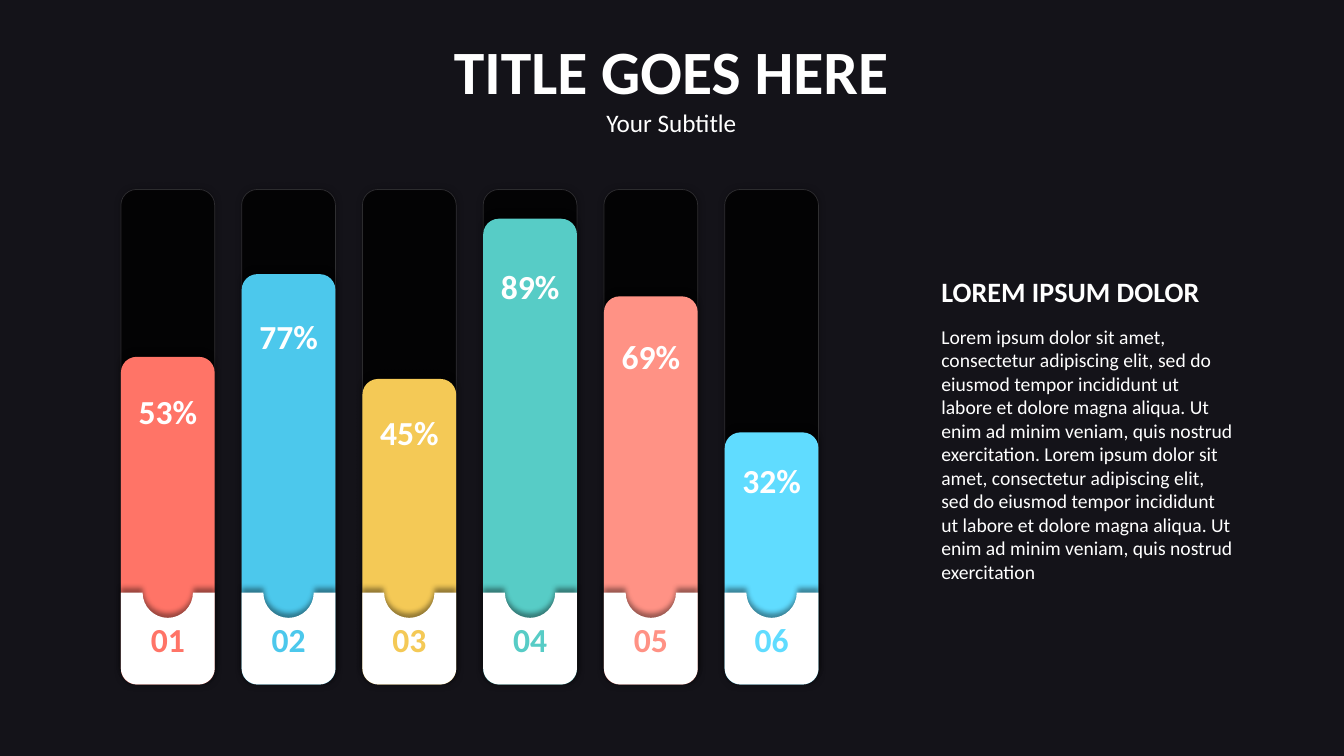
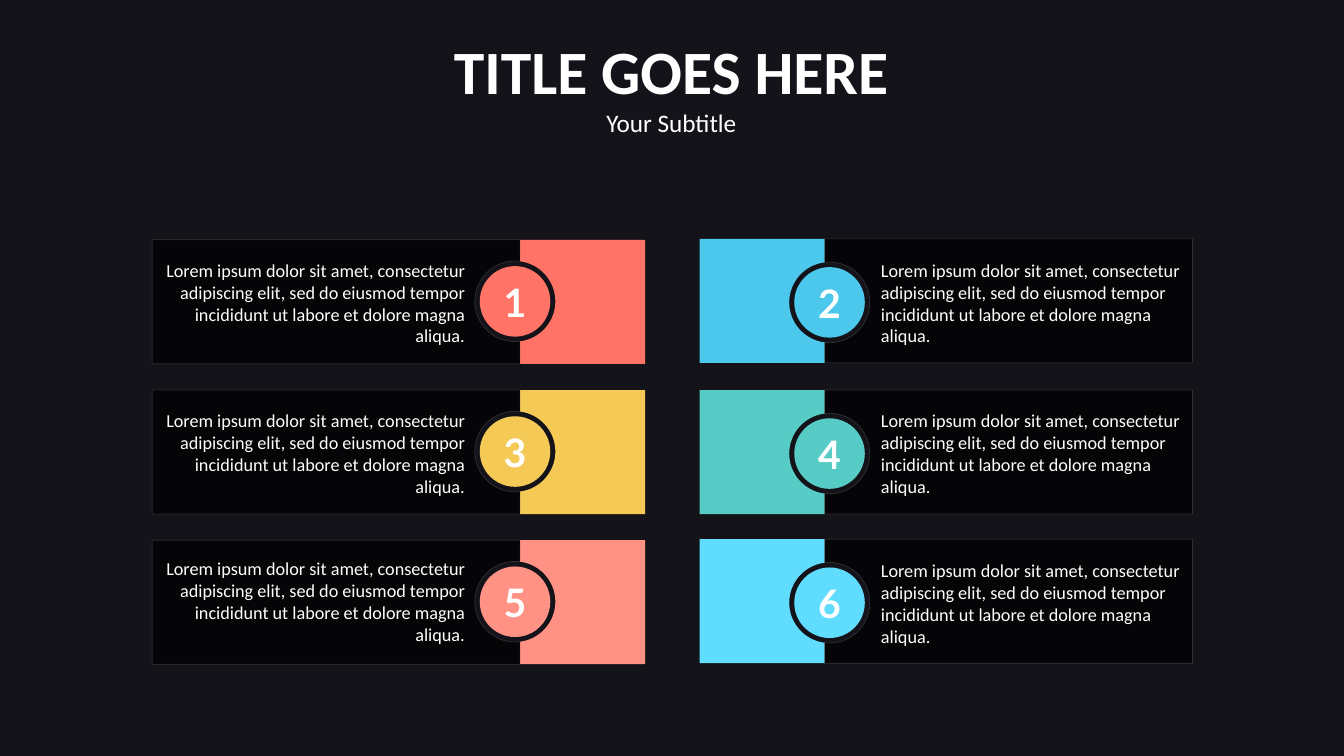
from math import acos, cos, degrees, radians, sin, tan

from lxml import etree
from pptx import Presentation
from pptx.dml.color import RGBColor
from pptx.enum.shapes import MSO_SHAPE
from pptx.enum.text import MSO_ANCHOR, MSO_AUTO_SIZE, PP_ALIGN
from pptx.oxml.ns import qn
from pptx.util import Inches, Pt

LEFT, CENTER, RIGHT = PP_ALIGN.LEFT, PP_ALIGN.CENTER, PP_ALIGN.RIGHT
TOP, MIDDLE = MSO_ANCHOR.TOP, MSO_ANCHOR.MIDDLE
FIT_SHAPE = MSO_AUTO_SIZE.SHAPE_TO_FIT_TEXT
RECT, ROUNDED, OVAL = MSO_SHAPE.RECTANGLE, MSO_SHAPE.ROUNDED_RECTANGLE, MSO_SHAPE.OVAL

BACKGROUND = RGBColor(0x52, 0x4E, 0x67)
BLACK = RGBColor(0x00, 0x00, 0x00)
WHITE = RGBColor(0xFF, 0xFF, 0xFF)
CORAL = RGBColor(0xFF, 0x74, 0x67)
BLUE = RGBColor(0x4C, 0xC8, 0xEC)
YELLOW = RGBColor(0xF4, 0xC9, 0x56)
TEAL = RGBColor(0x57, 0xCC, 0xC6)
SALMON = RGBColor(0xFF, 0x92, 0x85)
SKY = RGBColor(0x60, 0xDC, 0xFF)
PALETTE = [CORAL, BLUE, YELLOW, TEAL, SALMON, SKY]

TITLE, SUBTITLE = "TITLE GOES HERE", "Your Subtitle"
BARS = [("53%", 3.25), ("77%", 4.07), ("45%", 3.03),
        ("89%", 4.62), ("69%", 3.85), ("32%", 2.5)]
SENTENCE = ("Lorem ipsum dolor sit amet, consectetur adipiscing elit, sed do eiusmod "
            "tempor incididunt ut labore et dolore magna aliqua.")
SIDE_HEADING = "LOREM IPSUM DOLOR"
ENDING = "Ut enim ad minim veniam, quis nostrud exercitation"
SIDE_TEXT = f"{SENTENCE} {ENDING}. {SENTENCE} {ENDING}"

BAR_LEFT, BAR_LAST_LEFT, BAR_TOP = 1.2, 7.19, 1.88
BAR_PITCH = (BAR_LAST_LEFT - BAR_LEFT) / (len(BARS) - 1)
BAR_W, BAR_H = 0.93, 4.91
BAR_BOTTOM = BAR_TOP + BAR_H
BASE_H, NOTCH_R, CORNER_R = 0.91, 0.25, 0.16

CARD_LEFT, CARD_SEAM, CARD_RIGHT, CARD_H = 1.51, 5.16, 6.4, 1.23
CARD_TOPS = [2.38, 2.37, 3.87, 3.87, 5.36, 5.35]
DOT_CENTERS = [2.99, 3.0, 4.48, 4.5, 5.97, 5.98]
TEXT_TOPS = [2.57, 2.57, 4.06, 4.06, 5.53, 5.55]
DOT_X, DOT_R, BITE_R = 5.11, 0.35, 0.4
MIRROR_W = 13.34


def set_alpha(fill, percent):
    color = fill._xPr.find(qn("a:solidFill"))[0]
    etree.SubElement(color, qn("a:alpha"), val=str(percent * 1000))


def add_shadow(s, blur, distance, direction):
    effects = s._element.spPr.find(qn("a:effectLst"))
    shadow = etree.SubElement(effects, qn("a:outerShdw"), blurRad=str(Pt(blur)),
                              dist=str(Pt(distance)), dir=str(direction * 60000),
                              algn="ctr", rotWithShape="0")
    color = etree.SubElement(shadow, qn("a:srgbClr"), val=str(BLACK))
    etree.SubElement(color, qn("a:alpha"), val="40000")


def paint(s, color):
    s.shadow.inherit = False
    s.fill.solid()
    s.fill.fore_color.rgb = color
    s.line.fill.background()
    return s


def paint_glass(s):
    paint(s, BLACK)
    set_alpha(s.fill, 75)
    s.line.color.rgb = WHITE
    s.line.width = Pt(0.5)
    set_alpha(s.line.fill, 15)
    return s


def add_preset(slide, kind, x, y, w, h):
    return slide.shapes.add_shape(kind, Inches(x), Inches(y), Inches(w), Inches(h))


def arc(cx, cy, r, start, end):
    count = max(1, round(abs(end - start) / 90))
    step = radians(end - start) / count
    k = r * 4 / 3 * tan(step / 4)
    curves = []
    for i in range(count):
        a = radians(start) + i * step
        b = a + step
        x0, y0 = cx + r * cos(a), cy + r * sin(a)
        x1, y1 = cx + r * cos(b), cy + r * sin(b)
        curves.append([(x0 - k * sin(a), y0 + k * cos(a)),
                       (x1 + k * sin(b), y1 - k * cos(b)), (x1, y1)])
    return curves


def add_outline(slide, start, segments, mirrored=False):
    points = [start] + [point for segment in segments for point in segment]
    points = [(Inches(MIRROR_W - x if mirrored else x), Inches(y)) for x, y in points]
    builder = slide.shapes.build_freeform(*points[0], scale=1.0)
    builder.add_line_segments(points[1:], close=True)
    s = builder.convert_to_shape()
    lines = iter(list(s._element.iter(qn("a:lnTo"))))
    for segment in segments:
        nodes = [next(lines) for _ in segment]
        if len(nodes) == 3:
            curve = etree.Element(qn("a:cubicBezTo"))
            nodes[0].addprevious(curve)
            for node in nodes:
                curve.append(node[0])
                node.getparent().remove(node)
    return s


def write(s, lines, align=CENTER, anchor=TOP, font="Calibri"):
    tf = s.text_frame
    tf.word_wrap = True
    tf.vertical_anchor = anchor
    for i, (text, size, bold, color, before) in enumerate(lines):
        p = tf.paragraphs[0] if i == 0 else tf.add_paragraph()
        p.alignment = align
        p.space_before = Pt(before)
        r = p.add_run()
        r.text = text
        r.font.name, r.font.size, r.font.bold = font, Pt(size), bold
        r.font.color.rgb = color
    return tf


def add_text(slide, x, y, w, h, lines, align=CENTER):
    box = slide.shapes.add_textbox(Inches(x), Inches(y), Inches(w), Inches(h))
    tf = write(box, lines, align)
    tf.auto_size = FIT_SHAPE
    return tf


def add_slide(prs):
    slide = prs.slides.add_slide(prs.slide_layouts[6])
    add_text(slide, 3.65, 0.28, 6.02, 1.14,
             [(TITLE, 44, True, WHITE, 0), (SUBTITLE, 18, False, WHITE, 0)])
    return slide


def set_backdrop(prs, slide):
    master = prs.slide_master
    master.background.fill.solid()
    master.background.fill.fore_color.rgb = BACKGROUND
    veil = paint(slide.shapes.add_shape(RECT, 0, 0, prs.slide_width, prs.slide_height), BLACK)
    set_alpha(veil.fill, 75)
    master.shapes._spTree.insert(2, veil._element)


def add_bar(slide, i, label, height, color):
    x = BAR_LEFT + i * BAR_PITCH
    right, middle = x + BAR_W, x + BAR_W / 2
    track = paint_glass(add_preset(slide, ROUNDED, x, BAR_TOP, BAR_W, BAR_H))
    add_shadow(track, 5, 0, 0)

    top = BAR_BOTTOM - height
    bar = paint(add_preset(slide, ROUNDED, x, top, BAR_W, height), color)
    add_shadow(bar, 4, 3, 270)
    add_text(slide, x, top + 0.09 * height, BAR_W, 0.47, [(label, 24, True, WHITE, 0)])

    base_top = BAR_BOTTOM - BASE_H
    corner_y = BAR_BOTTOM - CORNER_R
    base = paint(add_outline(slide, (x, base_top), [
        [(middle - NOTCH_R, base_top)],
        *arc(middle, base_top, NOTCH_R, 180, 0),
        [(right, base_top)],
        [(right, corner_y)],
        *arc(right - CORNER_R, corner_y, CORNER_R, 0, 90),
        [(x + CORNER_R, BAR_BOTTOM)],
        *arc(x + CORNER_R, corner_y, CORNER_R, 90, 180),
    ]), WHITE)
    add_shadow(base, 4, 3, 270)
    write(base, [(f"{i + 1:02}", 24, True, color, 0)], anchor=MIDDLE)


def add_card(slide, i, color, top, dot_y, text_top):
    mirrored = i % 2 == 1
    bottom = top + CARD_H
    bite = degrees(acos((CARD_SEAM - DOT_X) / BITE_R))
    reach = BITE_R * sin(radians(bite))
    block = [[(CARD_RIGHT, top)], [(CARD_RIGHT, bottom)], [(CARD_SEAM, bottom)],
             [(CARD_SEAM, dot_y + reach)], *arc(DOT_X, dot_y, BITE_R, bite, -bite)]
    panel = [[(CARD_SEAM, top)], [(CARD_SEAM, dot_y - reach)],
             *arc(DOT_X, dot_y, BITE_R, 360 - bite, bite),
             [(CARD_SEAM, bottom)], [(CARD_LEFT, bottom)]]
    paint(add_outline(slide, (CARD_SEAM, top), block, mirrored), color)
    paint_glass(add_outline(slide, (CARD_LEFT, top), panel, mirrored))

    dot_x = MIRROR_W - DOT_X if mirrored else DOT_X
    dot = paint(add_preset(slide, OVAL, dot_x - DOT_R, dot_y - DOT_R,
                           2 * DOT_R, 2 * DOT_R), color)
    write(dot, [(str(i + 1), 28, True, WHITE, 0)], anchor=MIDDLE, font="Lato")

    tf = add_text(slide, 8.74 if mirrored else 1.61, text_top, 3, 0.88,
                  [(SENTENCE, 13, False, WHITE, 0)], LEFT if mirrored else RIGHT)
    tf.margin_left = tf.margin_right = tf.margin_top = tf.margin_bottom = 0


def main():
    prs = Presentation()
    prs.slide_width, prs.slide_height = Inches(40) // 3, Inches(7.5)

    slide = add_slide(prs)
    set_backdrop(prs, slide)
    for i, ((label, height), color) in enumerate(zip(BARS, PALETTE)):
        add_bar(slide, i, label, height, color)
    add_text(slide, 9.24, 2.67, 3.09, 3.97,
             [(SIDE_HEADING, 20, True, WHITE, 0), (SIDE_TEXT, 14, False, WHITE, 12)], LEFT)

    slide = add_slide(prs)
    for i, card in enumerate(zip(PALETTE, CARD_TOPS, DOT_CENTERS, TEXT_TOPS)):
        add_card(slide, i, *card)

    prs.save("out.pptx")


if __name__ == "__main__":
    main()
